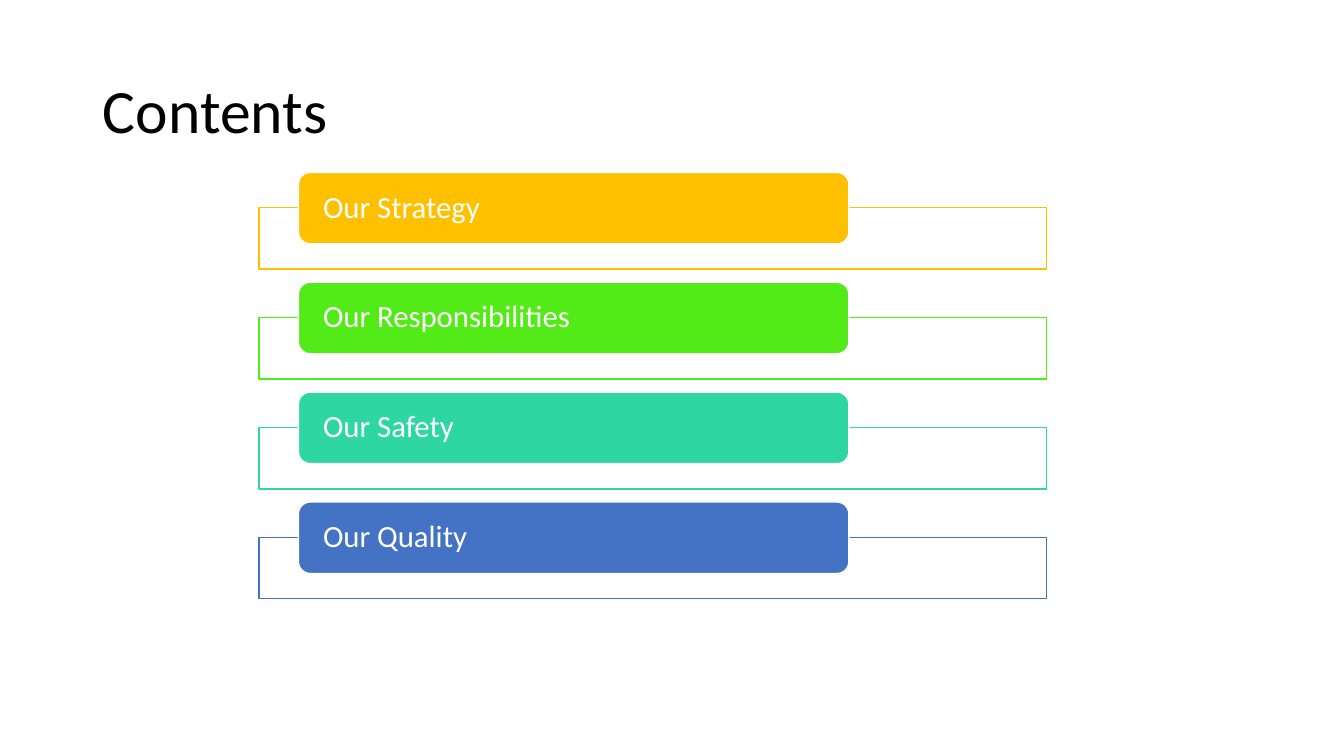
from lxml import etree
from pptx import Presentation
from pptx.dml.color import RGBColor
from pptx.enum.shapes import MSO_SHAPE
from pptx.enum.text import MSO_ANCHOR, PP_ALIGN
from pptx.oxml.ns import qn
from pptx.util import Inches, Pt

RECTANGLE = MSO_SHAPE.RECTANGLE
ROUNDED = MSO_SHAPE.ROUNDED_RECTANGLE
MIDDLE = MSO_ANCHOR.MIDDLE
LEFT = PP_ALIGN.LEFT

SECTIONS = [
    ("Our Strategy", "FFC000"),
    ("Our Responsibilities", "53EB17"),
    ("Our Safety", "2ED7A1"),
    ("Our Quality", "4472C4"),
]
FIRST_TOP = 1.71
ROW_PITCH = 1.09
FRAME_OFFSET = 0.35


def add_box(kind, left, top, width, height, fill, line):
    shape = slide.shapes.add_shape(
        kind, Inches(left), Inches(top), Inches(width), Inches(height))
    shape.shadow.inherit = False
    shape.fill.solid()
    shape.fill.fore_color.rgb = RGBColor.from_string(fill)
    shape.line.color.rgb = RGBColor.from_string(line)
    shape.line.width = Pt(1)
    return shape


def write_text(shape, text, size, color, side_inset, edge_inset):
    frame = shape.text_frame
    frame_format = {
        "text": text,
        "word_wrap": True,
        "vertical_anchor": MIDDLE,
        "margin_left": Inches(side_inset),
        "margin_right": Inches(side_inset),
        "margin_top": Inches(edge_inset),
        "margin_bottom": Inches(edge_inset),
    }
    for name, value in frame_format.items():
        setattr(frame, name, value)
    paragraph = frame.paragraphs[0]
    paragraph.alignment = LEFT
    paragraph.line_spacing = 0.9
    font = paragraph.runs[0].font
    for name, value in {"name": "Calibri", "size": Pt(size)}.items():
        setattr(font, name, value)
    font.color.rgb = RGBColor.from_string(color)


presentation = Presentation()
presentation.slide_width = Inches(13.33)
presentation.slide_height = Inches(7.5)
slide = presentation.slides.add_slide(presentation.slide_layouts[5])

title = slide.shapes.title
title_place = {"left": 0.92, "top": 0.4, "width": 11.5, "height": 1.45}
for name, value in title_place.items():
    setattr(title, name, Inches(value))
write_text(title, "Contents", 44, "000000", 0.1, 0.05)

for index, (label, color) in enumerate(SECTIONS):
    top = FIRST_TOP + index * ROW_PITCH
    frame_box = add_box(RECTANGLE, 2.57, top + FRAME_OFFSET, 7.81, 0.61, "FFFFFF", color)
    fill_color = frame_box.fill._xPr.find(qn("a:solidFill"))[0]
    etree.SubElement(fill_color, qn("a:alpha"), val="90000")
    label_box = add_box(ROUNDED, 2.96, top, 5.46, 0.71, color, "FFFFFF")
    write_text(label_box, label, 22, "FFFFFF", 0.21, 0)

presentation.save("out.pptx")
